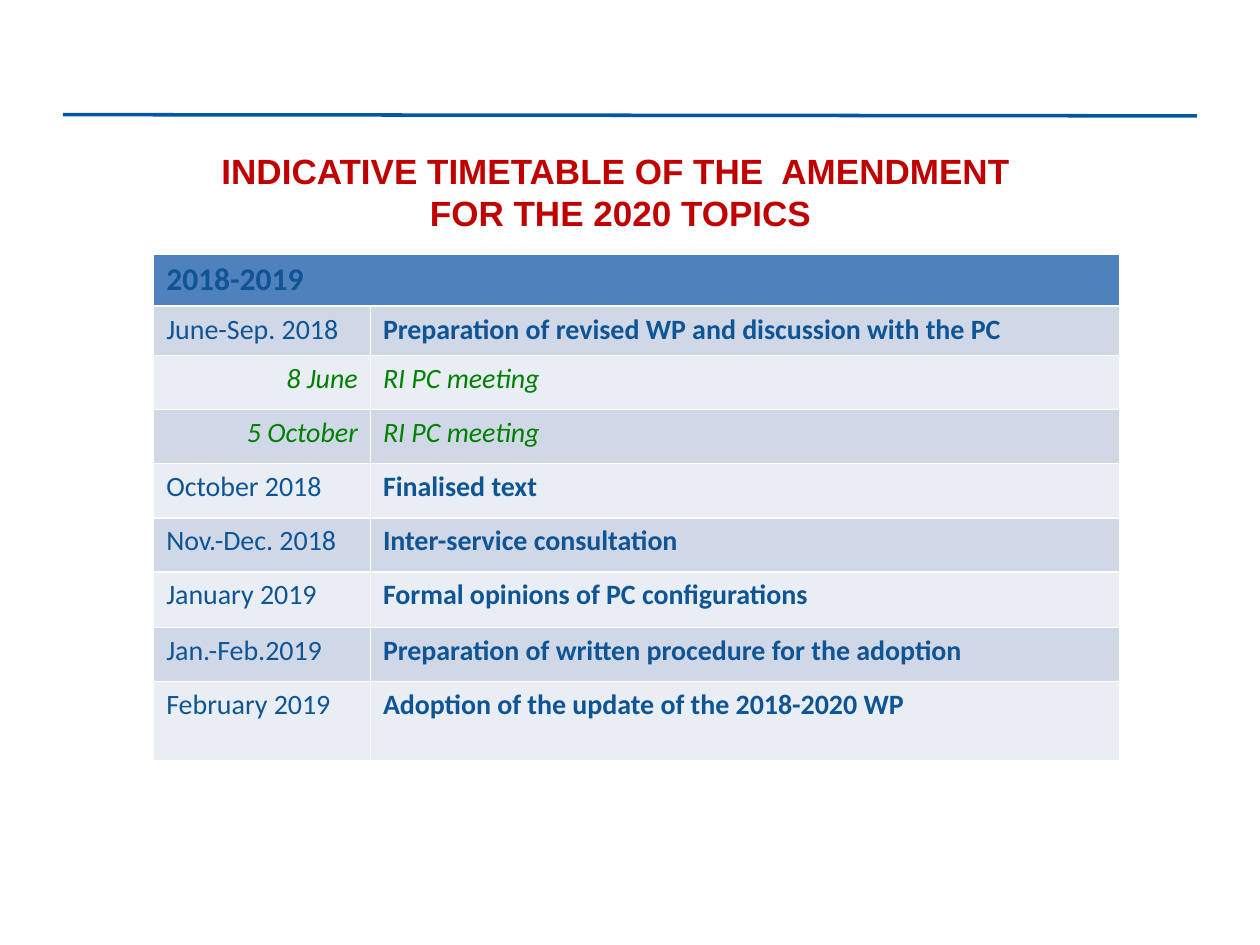
from pptx import Presentation
from pptx.dml.color import RGBColor
from pptx.enum.shapes import MSO_CONNECTOR
from pptx.enum.text import MSO_ANCHOR, PP_ALIGN
from pptx.oxml import parse_xml
from pptx.oxml.ns import nsdecls
from pptx.util import Inches, Pt

STRAIGHT = MSO_CONNECTOR.STRAIGHT
MIDDLE = MSO_ANCHOR.MIDDLE
LEFT, CENTER, RIGHT = PP_ALIGN.LEFT, PP_ALIGN.CENTER, PP_ALIGN.RIGHT

BLUE, GREEN, RED, RULE = "0F5494", "008000", "C00000", "0157A4"
HEADER_FILL, BANDS = "4F81BD", ("D0D8E8", "E9EDF4")

TITLE = "INDICATIVE TIMETABLE OF THE  AMENDMENT \vFOR THE 2020 TOPICS"
PERIOD = "2018-2019"
# date, step, row height, is a meeting
STEPS = [
    ("June-Sep. 2018", "Preparation of revised WP and discussion with the PC", 0.39, False),
    ("8 June", "RI PC meeting", 0.43, True),
    ("5 October", "RI PC meeting", 0.43, True),
    ("October 2018", "Finalised text", 0.43, False),
    ("Nov.-Dec. 2018", "Inter-service consultation", 0.43, False),
    ("January 2019", "Formal opinions of PC configurations", 0.44, False),
    ("Jan.-Feb.2019", "Preparation of written procedure for the adoption", 0.43, False),
    ("February 2019", "Adoption of the update of the 2018-2020 WP", 0.63, False),
]
COLUMN_WIDTHS = (1.72, 5.95)
ROW_HEIGHTS = [0.41] + [height for _, _, height, _ in STEPS]


def rgb(value):
    return RGBColor.from_string(value)


def write(frame, text, size, color, name="Calibri", bold=False, italic=False, align=LEFT):
    frame.text = text
    para = frame.paragraphs[0]
    para.alignment = align
    font = para.font
    font.name, font.size, font.bold, font.italic = name, Pt(size), bold, italic
    font.color.rgb = rgb(color)


def fill_cell(cell, color):
    cell.fill.solid()
    cell.fill.fore_color.rgb = rgb(color)


deck = Presentation()
deck.slide_width, deck.slide_height = Inches(10), Inches(7.5)
page = deck.slides.add_slide(deck.slide_layouts[6])

rule = page.shapes.add_connector(STRAIGHT, Inches(0.5), Inches(0.91), Inches(9.5), Inches(0.92))
rule.line.color.rgb = rgb(RULE)
rule.line.width = Pt(2)
rule._element.spPr.append(parse_xml(f"<a:effectLst {nsdecls('a')}/>"))

title = page.shapes.add_textbox(Inches(0.12), Inches(1.15), Inches(9.61), Inches(0.74)).text_frame
title.word_wrap = True
title.vertical_anchor = MIDDLE
title.margin_left = title.margin_right = title.margin_top = title.margin_bottom = 0
write(title, TITLE, 20, RED, name="Arial", bold=True, align=CENTER)

# The default table style supplies the white cell borders.
timetable = page.shapes.add_table(
    len(ROW_HEIGHTS), len(COLUMN_WIDTHS), Inches(1.22), Inches(2.02),
    Inches(sum(COLUMN_WIDTHS)), Inches(sum(ROW_HEIGHTS))).table
for column, width in zip(timetable.columns, COLUMN_WIDTHS):
    column.width = Inches(width)
for row, height in zip(timetable.rows, ROW_HEIGHTS):
    row.height = Inches(height)

header = timetable.cell(0, 0)
header.merge(timetable.cell(0, 1))
fill_cell(header, HEADER_FILL)
write(header.text_frame, PERIOD, 18, BLUE, bold=True)

for index, (date, step, _, meeting) in enumerate(STEPS):
    date_cell, step_cell = timetable.rows[index + 1].cells
    color = GREEN if meeting else BLUE
    for cell in (date_cell, step_cell):
        fill_cell(cell, BANDS[index % 2])
    write(date_cell.text_frame, date, 16, color, italic=meeting, align=RIGHT if meeting else LEFT)
    write(step_cell.text_frame, step, 16, color, bold=not meeting, italic=meeting)

deck.save("out.pptx")
